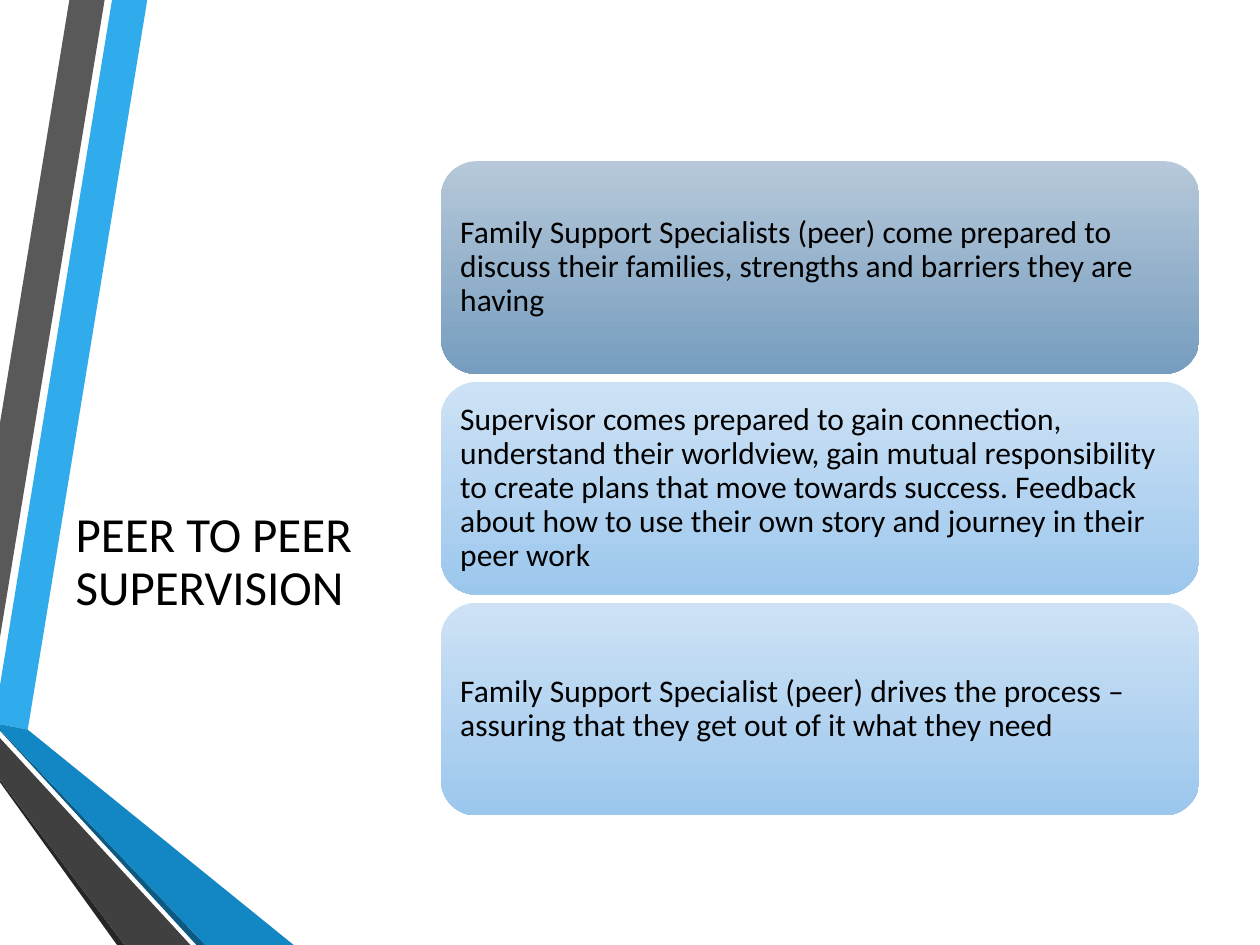
"""Build the peer to peer supervision slide with ribbons and three statement boxes."""
from dataclasses import dataclass

from pptx import Presentation
from pptx.dml.color import RGBColor
from pptx.enum.shapes import MSO_SHAPE
from pptx.enum.text import MSO_ANCHOR, MSO_AUTO_SIZE, PP_ALIGN
from pptx.util import Cm, Pt

ROUNDED = MSO_SHAPE.ROUNDED_RECTANGLE
TOP, MIDDLE = MSO_ANCHOR.TOP, MSO_ANCHOR.MIDDLE
LEFT = PP_ALIGN.LEFT
NO_AUTOFIT = MSO_AUTO_SIZE.NONE
TITLE_ONLY = 5


@dataclass(frozen=True)
class Theme:
    font: str = "Calibri"
    title_size: int = 28
    body_size: int = 18
    text: str = "000000"
    sky: str = "30ACEC"
    grey: str = "595959"
    black: str = "262626"
    navy: str = "0C5A82"
    blue: str = "1287C3"
    charcoal: str = "404040"
    steel: tuple = ("B6C8D9", "769DBF")
    pale: tuple = ("CEE2F5", "9CC7ED")


def write_text(shape, text, size, anchor):
    frame = shape.text_frame
    frame.word_wrap = True
    frame.auto_size = NO_AUTOFIT
    frame.vertical_anchor = anchor
    paragraph = frame.paragraphs[0]
    paragraph.alignment = LEFT
    paragraph.line_spacing = 0.9
    run = paragraph.add_run()
    run.text = text
    run.font.name = theme.font
    run.font.size = Pt(size)
    run.font.color.rgb = RGBColor.from_string(theme.text)


theme = Theme()
presentation = Presentation()
presentation.slide_width = Cm(25.4)
presentation.slide_height = Cm(19.05)
slide = presentation.slides.add_slide(presentation.slide_layouts[TITLE_ONLY])

ribbons = [
    (theme.sky, [(0, 13.82), (0, 14.6), (0.56, 14.71), (2.97, 0), (2.26, 0)]),
    (theme.grey, [(2.11, 0), (1.4, 0), (0, 8.53), (0, 12.85)]),
    (theme.black, [(0, 15.72), (0, 15.77), (2.36, 19.05), (2.51, 19.05)]),
    (theme.navy, [(0, 14.71), (0, 14.73), (3.96, 19.05), (4.14, 19.05)]),
    (theme.blue, [(0, 14.71), (4.14, 19.05), (5.92, 19.05), (0.56, 14.71), (0, 14.6)]),
    (theme.charcoal, [(0, 15.72), (2.51, 19.05), (3.84, 19.05), (0, 14.88)]),
]
for color, corners in ribbons:
    points = [(Cm(x), Cm(y)) for x, y in corners]
    builder = slide.shapes.build_freeform(*points[0])
    builder.add_line_segments(points[1:], close=True)
    ribbon = builder.convert_to_shape()
    ribbon.shadow.inherit = False
    ribbon.fill.solid()
    ribbon.fill.fore_color.rgb = RGBColor.from_string(color)
    ribbon.line.fill.background()

title = slide.shapes.title
title.left, title.top = Cm(1.27), Cm(10.16)
title.width, title.height = Cm(7.19), Cm(5.79)
write_text(title, "PEER TO PEER SUPERVISION", theme.title_size, TOP)

statements = [
    (theme.steel, "Family Support Specialists (peer) come prepared to discuss their families, "
                  "strengths and barriers they are having"),
    (theme.pale, "Supervisor comes prepared to gain connection, understand their worldview, "
                 "gain mutual responsibility to create plans that move towards success. "
                 "Feedback about how to use their own story and journey in their peer work"),
    (theme.pale, "Family Support Specialist (peer) drives the process – assuring that they "
                 "get out of it what they need"),
]
for row, (gradient, statement) in enumerate(statements):
    box = slide.shapes.add_shape(ROUNDED, Cm(8.89), Cm(3.25 + 4.45 * row), Cm(15.29), Cm(4.29))
    box.shadow.inherit = False
    box.line.fill.background()
    box.fill.gradient()
    box.fill.gradient_angle = 270
    for stop, color in zip(box.fill.gradient_stops, gradient):
        stop.color.rgb = RGBColor.from_string(color)
    frame = box.text_frame
    frame.margin_left = frame.margin_right = frame.margin_top = frame.margin_bottom = Cm(0.18)
    write_text(box, statement, theme.body_size, MIDDLE)

presentation.save("out.pptx")
